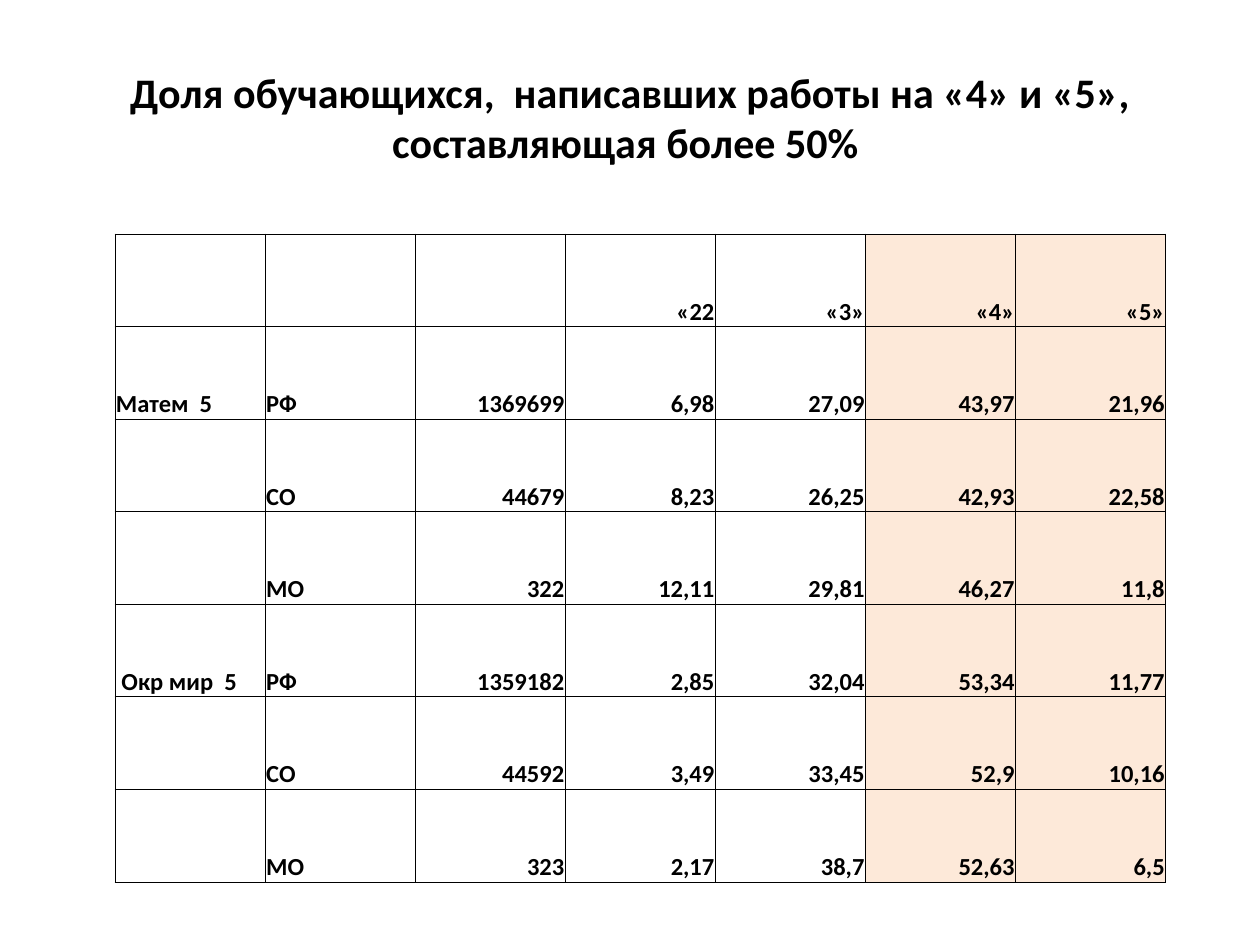
from dataclasses import dataclass

from lxml.etree import SubElement
from pptx import Presentation
from pptx.dml.color import RGBColor
from pptx.enum.text import MSO_ANCHOR as Anchor, PP_ALIGN as Align
from pptx.oxml.ns import qn
from pptx.util import Emu, Pt

EMU_PER_PX = 914400 / 126


def px(length: int) -> Emu:
    return Emu(round(length * EMU_PER_PX))


@dataclass(frozen=True)
class Theme:
    font: str = "Calibri"
    ink: str = "000000"
    highlight: str = "FDE9D9"
    heading_size: int = 24
    score_size: int = 14
    border_width: float = 0.5


@dataclass(frozen=True)
class Box:
    left: int
    top: int
    width: int
    height: int

    def emu(self) -> tuple[Emu, ...]:
        return tuple(map(px, (self.left, self.top, self.width, self.height)))


@dataclass(frozen=True)
class ScoreRow:
    subject: str
    region: str
    pupils: str
    shares: tuple[str, ...]

    def texts(self) -> tuple[str, ...]:
        return (self.subject, self.region, self.pupils, *self.shares)


THEME = Theme()
HEADING = "Доля обучающихся,  написавших работы на «4» и «5», составляющая более 50% "
HEADING_BOX = Box(63, 38, 1134, 158)
SCORES_BOX = Box(115, 234, 1051, 648)
LABEL_COLUMNS = 2
HIGHLIGHT_FROM = 5
CELL_FORMAT = {
    "margin_left": px(1),
    "margin_right": px(1),
    "margin_top": px(1),
    "margin_bottom": px(0),
    "vertical_anchor": Anchor.BOTTOM,
}
SCORES = (
    ScoreRow("", "", "", ("«22", "«3»", "«4»", "«5»")),
    ScoreRow("Матем  5", "РФ", "1369699", ("6,98", "27,09", "43,97", "21,96")),
    ScoreRow("", "СО", "44679", ("8,23", "26,25", "42,93", "22,58")),
    ScoreRow("", "МО", "322", ("12,11", "29,81", "46,27", "11,8")),
    ScoreRow(" Окр мир  5", "РФ", "1359182", ("2,85", "32,04", "53,34", "11,77")),
    ScoreRow("", "СО", "44592", ("3,49", "33,45", "52,9", "10,16")),
    ScoreRow("", "МО", "323", ("2,17", "38,7", "52,63", "6,5")),
)


def apply(target, values: dict) -> None:
    for attribute, value in values.items():
        setattr(target, attribute, value)


def write(paragraph, text: str, size: int, align: Align) -> None:
    paragraph.alignment = align
    run = paragraph.add_run()
    run.text = text
    apply(run.font, {"name": THEME.font, "size": Pt(size), "bold": True})
    run.font.color.rgb = RGBColor.from_string(THEME.ink)


def draw_borders(cell) -> None:
    properties = cell._tc.get_or_add_tcPr()
    for side in ("lnL", "lnR", "lnT", "lnB"):
        line = SubElement(properties, qn(f"a:{side}"), w=str(Pt(THEME.border_width)))
        fill = SubElement(line, qn("a:solidFill"))
        SubElement(fill, qn("a:srgbClr"), val=THEME.ink)


def draw_cell(cell, text: str, column: int) -> None:
    apply(cell, CELL_FORMAT)
    draw_borders(cell)
    if column >= HIGHLIGHT_FROM:
        cell.fill.solid()
        cell.fill.fore_color.rgb = RGBColor.from_string(THEME.highlight)
    else:
        cell.fill.background()
    if text:
        align = Align.LEFT if column < LABEL_COLUMNS else Align.RIGHT
        write(cell.text_frame.paragraphs[0], text, THEME.score_size, align)


def draw_heading(slide) -> None:
    heading = slide.shapes.title
    apply(heading, dict(zip(("left", "top", "width", "height"), HEADING_BOX.emu())))
    apply(heading.text_frame, {"word_wrap": True, "vertical_anchor": Anchor.MIDDLE})
    write(heading.text_frame.paragraphs[0], HEADING, THEME.heading_size, Align.CENTER)


def draw_scores(slide) -> None:
    columns = len(SCORES[0].texts())
    scores = slide.shapes.add_table(len(SCORES), columns, *SCORES_BOX.emu()).table
    apply(scores, {"first_row": False, "horz_banding": False})
    for row, score in enumerate(SCORES):
        for column, text in enumerate(score.texts()):
            draw_cell(scores.cell(row, column), text, column)


def main() -> None:
    deck = Presentation()
    apply(deck, {"slide_width": px(1260), "slide_height": px(945)})
    slide = deck.slides.add_slide(deck.slide_layouts[5])
    draw_heading(slide)
    draw_scores(slide)
    deck.save("out.pptx")


if __name__ == "__main__":
    main()
